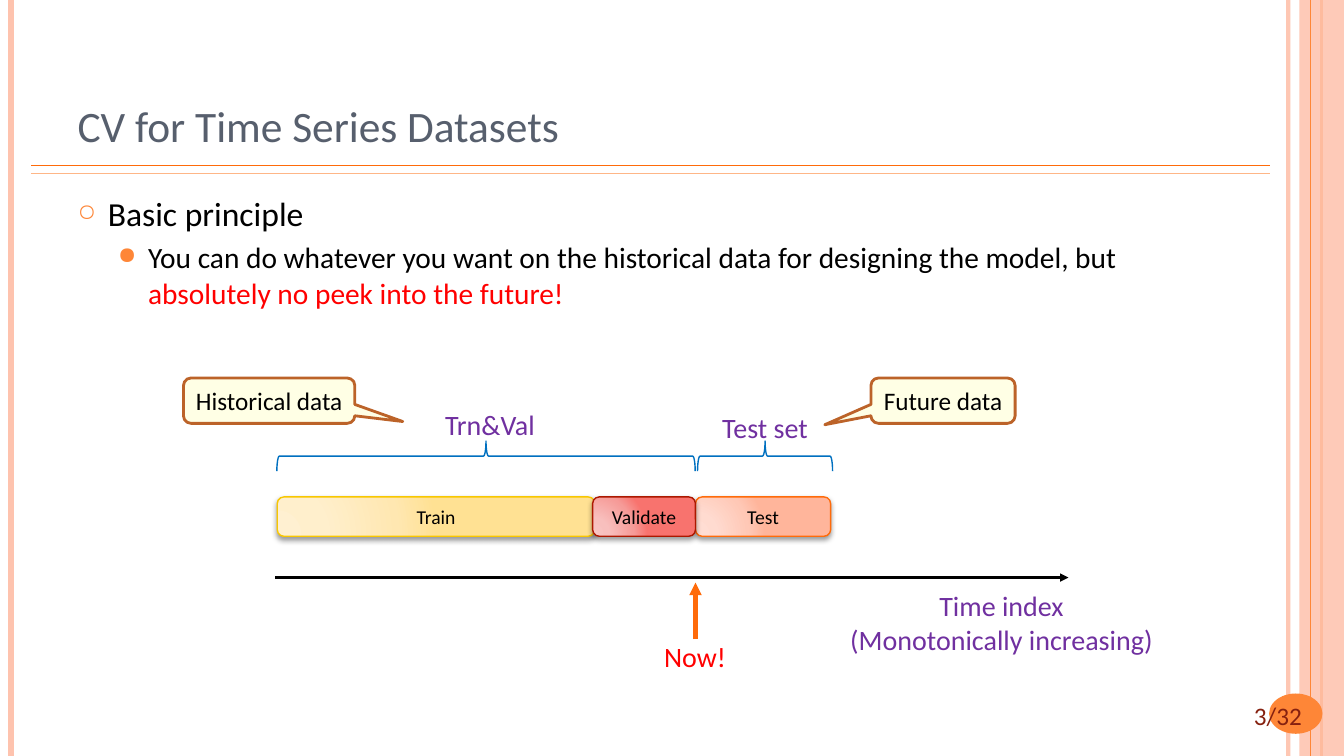
from lxml.etree import SubElement
from pptx import Presentation
from pptx.dml.color import RGBColor
from pptx.enum.shapes import MSO_CONNECTOR, MSO_SHAPE
from pptx.enum.text import MSO_ANCHOR, MSO_AUTO_SIZE, PP_ALIGN
from pptx.oxml import parse_xml
from pptx.oxml.ns import nsdecls, qn
from pptx.util import Inches, Pt

WIDE, HIGH = Inches(13.33), Inches(7.5)
FONT = "Calibri"
HUES = {
    "ink": "000000", "title": "575F6D", "page": "862110", "red": "FF0000",
    "violet": "7030A0", "blue": "0070C0", "pink": "FEC3AE", "orange": "FE8637",
    "deep": "FF6B0A", "pale": "FEB687", "cream": "FFFFCC", "brown": "BC6329",
    "gold": "F8C700", "rust": "AC1800",
}
# Gradient colours of the bars, at the stops below
STOPS = (0, 30, 75, 100)
BLENDS = {
    "train": ("FFF0D1", "FFEFCC", "FFE7B1", "FFE193"),
    "test": ("FFDED5", "FFDBD0", "FFC8B6", "FFB59B"),
    "valid": ("F8C5C3", "F8BFBD", "F69B98", "F8736E"),
}
BAR_TOP, BAR_HIGH = 65.73, 5.2
NOW = 51.75


# The grid has 100 columns and 100 rows
def col(n):
    return round(WIDE * n / 100)


def row(n):
    return round(HIGH * n / 100)


def place(x, y, w, h):
    return col(x), row(y), col(w), row(h)


def hue(name):
    return RGBColor.from_string(HUES[name])


def fade(paint, share):
    SubElement(paint.find(qn("a:srgbClr")), qn("a:alpha")).set("val", str(share * 1000))


def style(font, size, name):
    font.name, font.size = FONT, Pt(size)
    font.color.rgb = hue(name)


def write(frame, lines, size, name, align=PP_ALIGN.CENTER):
    for i, line in enumerate(lines):
        para = frame.paragraphs[0] if i == 0 else frame.add_paragraph()
        para.text, para.alignment = line, align
        style(para.font, size, name)


def fit(frame):
    frame.word_wrap = False
    frame.auto_size = MSO_AUTO_SIZE.SHAPE_TO_FIT_TEXT


def label(slide, box, lines, size, name, align=PP_ALIGN.CENTER):
    frame = slide.shapes.add_textbox(*place(*box)).text_frame
    fit(frame)
    write(frame, lines, size, name, align)
    return frame


def rule(slide, start, end, name, width, arrow=False, share=None):
    ends = col(start[0]), row(start[1]), col(end[0]), row(end[1])
    link = slide.shapes.add_connector(MSO_CONNECTOR.STRAIGHT, *ends)
    link.line.color.rgb, link.line.width = hue(name), Pt(width)
    props = link._element.spPr
    stroke = props.find(qn("a:ln"))
    if share:
        fade(stroke.find(qn("a:solidFill")), share)
    if arrow:
        SubElement(stroke, qn("a:tailEnd")).set("type", "triangle")
    SubElement(props, qn("a:effectLst"))


def form(slide, kind, box, fill=None, line=None, width=1):
    shape = slide.shapes.add_shape(kind, *place(*box))
    shape.shadow.inherit = False
    if fill:
        shape.fill.solid()
        shape.fill.fore_color.rgb = hue(fill)
    else:
        shape.fill.background()
    if line:
        shape.line.color.rgb, shape.line.width = hue(line), Pt(width)
    else:
        shape.line.fill.background()
    return shape


def bar(slide, x, w, text, blend, line):
    box = x, BAR_TOP, w, BAR_HIGH
    shape = form(slide, MSO_SHAPE.ROUNDED_RECTANGLE, box, line=line)
    props = shape._element.spPr
    stops = "".join(
        f'<a:gs pos="{stop * 1000}"><a:srgbClr val="{tint}"/></a:gs>'
        for stop, tint in zip(STOPS, BLENDS[blend]))
    props.replace(props.find(qn("a:noFill")), parse_xml(
        f'<a:gradFill {nsdecls("a")}><a:gsLst>{stops}</a:gsLst><a:path path="circle">'
        '<a:fillToRect l="5000" t="100000" r="120000" b="10000"/></a:path></a:gradFill>'))
    props.find(qn("a:effectLst")).append(parse_xml(
        f'<a:outerShdw {nsdecls("a")} blurRad="{Pt(4)}" dist="{Pt(2)}" dir="5400000" '
        'rotWithShape="0"><a:srgbClr val="000000"><a:alpha val="40000"/></a:srgbClr>'
        '</a:outerShdw>'))
    shape.text_frame.vertical_anchor = MSO_ANCHOR.MIDDLE
    write(shape.text_frame, [text], 14, "ink")


def brace(slide, x, w):
    shape = form(slide, MSO_SHAPE.RIGHT_BRACE, (x, 60.33, w, 4), line="blue")
    # Turn the brace about its centre so that it spans w columns
    mid_x, mid_y = shape.left + shape.width // 2, shape.top + shape.height // 2
    shape.width, shape.height = shape.height, shape.width
    shape.left, shape.top = mid_x - shape.width // 2, mid_y - shape.height // 2
    shape.top -= row(2)
    shape.rotation = 270


def callout(slide, x, w, text, tip):
    kind = MSO_SHAPE.ROUNDED_RECTANGULAR_CALLOUT
    shape = form(slide, kind, (x, 50, w, 6), "cream", "brown", 2)
    shape.adjustments[0], shape.adjustments[1] = tip
    fade(shape._element.spPr.find(qn("a:solidFill")), 50)
    fit(shape.text_frame)
    shape.text_frame.vertical_anchor = MSO_ANCHOR.MIDDLE
    write(shape.text_frame, [text], 18, "ink")


def bullet(para, mark, indent, share, size, runs):
    props = para._p.get_or_add_pPr()
    props.set("marL", str(Inches(indent)))
    props.set("indent", str(Inches(-0.3)))
    tint = SubElement(props, qn("a:buClr"))
    SubElement(tint, qn("a:srgbClr")).set("val", HUES["orange"])
    SubElement(props, qn("a:buSzPct")).set("val", str(share * 1000))
    SubElement(props, qn("a:buChar")).set("char", mark)
    for text, name in runs:
        run = para.add_run()
        run.text = text
        style(run.font, size, name)


def frame_page(slide):
    # Side stripes
    for x, name, width, share in ((95.85, "pink", 3, 93), (0.82, "pink", 4.5, None),
                                  (98.33, "orange", 1.5, None)):
        rule(slide, (x, 0), (x, 100), name, width, share=share)
    band = form(slide, MSO_SHAPE.RECTANGLE, (96.68, 0, 3.32, 100), "pink")
    fade(band._element.spPr.find(qn("a:solidFill")), 87)
    rule(slide, (97.5, 0), (97.5, 100), "orange", 0.75)
    # Rules below the title
    for y, name in ((21.87, "deep"), (22.93, "pale")):
        rule(slide, (2.33, y), (94.5, y), name, 1)
    # Page number
    form(slide, MSO_SHAPE.OVAL, (94.43, 91.73, 3.97, 5.33), "orange")
    label(slide, (92.55, 92, 7.4, 5.33), ["3/32"], 18, "page", PP_ALIGN.LEFT)


def add_text(slide):
    title = label(slide, (5.03, 4, 81.68, 16.67), ["CV for Time Series Datasets"],
                  31, "title", PP_ALIGN.LEFT)
    body = slide.shapes.add_textbox(*place(5.03, 24.93, 81.68, 69.47)).text_frame
    for frame in (title, body):
        frame.word_wrap, frame.auto_size = True, MSO_AUTO_SIZE.NONE
    title.vertical_anchor = MSO_ANCHOR.BOTTOM
    bullet(body.paragraphs[0], "○", 0.3, 70, 24, [("Basic principle", "ink")])
    rest = body.add_paragraph()
    rest.level, rest.space_before = 1, Pt(4.2)
    bullet(rest, "●", 0.7, 80, 21, [
        ("You can do whatever you want on the historical data for designing the model, but ",
         "ink"),
        ("absolutely no peek into the future!", "red")])


def add_chart_parts(slide):
    # Data bars
    bar(slide, 20.63, 23.63, "Train", "train", "gold")
    bar(slide, NOW, 10.05, "Test", "test", "deep")
    bar(slide, 44.1, 7.65, "Validate", "valid", "rust")
    # Time axis and present moment
    rule(slide, (20.48, 76.4), (79.5, 76.4), "ink", 2, arrow=True)
    label(slide, (62.4, 77.2, 24.23, 10.27),
          ["Time index", "(Monotonically increasing)"], 20, "violet")
    rule(slide, (NOW, 84.53), (NOW, 77.07), "deep", 3, arrow=True)
    label(slide, (48.68, 84, 6.15, 5.87), ["Now!"], 20, "red", PP_ALIGN.LEFT)
    # Braces with their names
    brace(slide, 20.6, 31.13)
    brace(slide, 51.9, 10.05)
    label(slide, (32.33, 53.2, 8.25, 5.87), ["Trn&Val"], 20, "violet")
    label(slide, (52.95, 53.6, 7.95, 5.87), ["Test set"], 20, "violet")
    # Callouts
    callout(slide, 64.8, 10.73, "Future data", (-0.82, 0.53))
    callout(slide, 13.65, 12.75, "Historical data", (0.78, 0.46))


def main():
    deck = Presentation()
    deck.slide_width, deck.slide_height = WIDE, HIGH
    slide = deck.slides.add_slide(deck.slide_layouts[6])
    frame_page(slide)
    add_text(slide)
    add_chart_parts(slide)
    deck.save("out.pptx")


if __name__ == "__main__":
    main()
